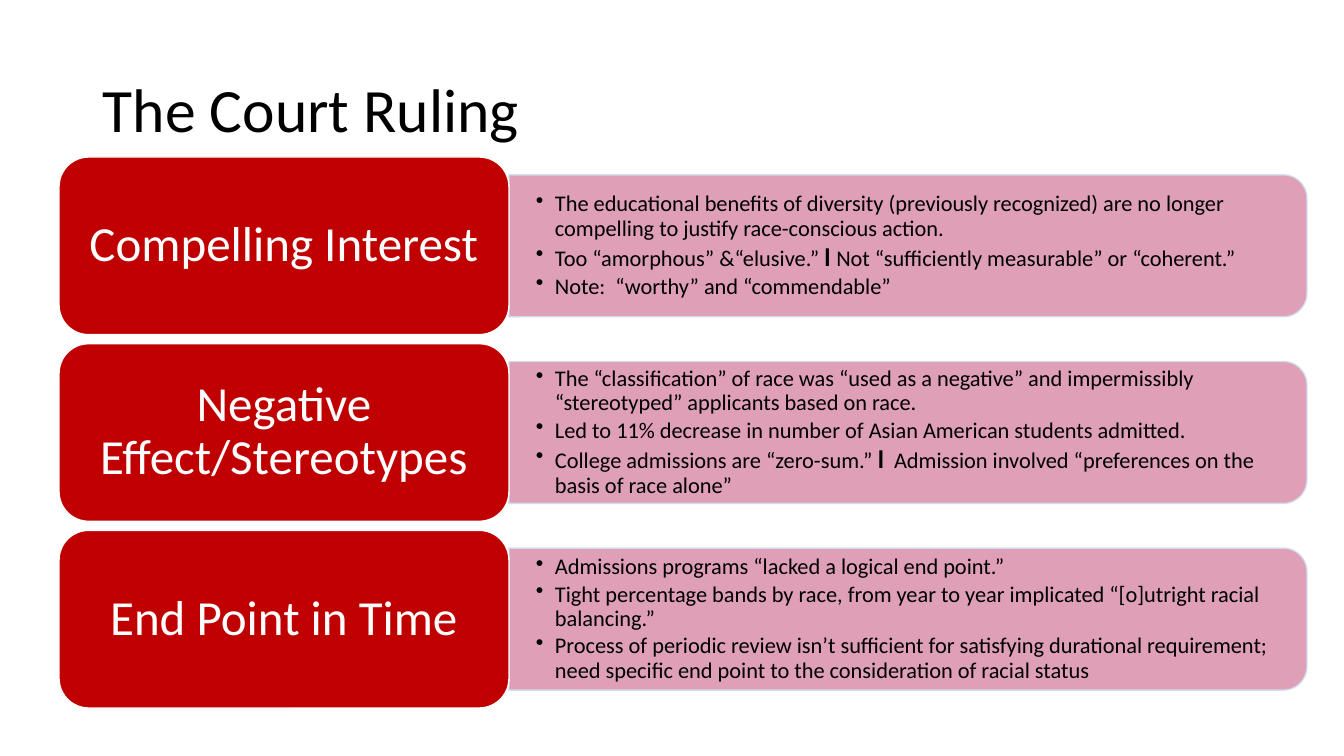
from dataclasses import dataclass

from lxml.etree import SubElement
from pptx import Presentation
from pptx.dml.color import RGBColor
from pptx.enum.shapes import MSO_SHAPE
from pptx.enum.text import MSO_ANCHOR, MSO_AUTO_SIZE, PP_ALIGN
from pptx.oxml.ns import qn
from pptx.util import Pt

TITLE = "The Court Ruling"
RULINGS = [
    ("Compelling Interest", [
        ["The educational benefits of diversity (previously recognized) are no longer "
         "compelling to justify race-conscious action."],
        ["Too “amorphous” &“elusive.” ", "l ", "Not “sufficiently measurable” or “coherent.”"],
        ["Note:  “worthy” and “commendable”"],
    ]),
    ("Negative Effect/Stereotypes", [
        ["The “classification” of race was “used as a negative” and impermissibly "
         "“stereotyped” applicants based on race."],
        ["Led to 11% decrease in number of Asian American students admitted."],
        ["College admissions are “zero-sum.” ", "l",
         "  Admission involved “preferences on the basis of race alone”"],
    ]),
    ("End Point in Time", [
        ["Admissions programs “lacked a logical end point.”"],
        ["Tight percentage bands by race, from year to year implicated "
         "“[o]utright racial balancing.”"],
        ["Process of periodic review isn’t sufficient for satisfying durational requirement; "
         "need specific end point to the consideration of racial status"],
    ]),
]


@dataclass(frozen=True)
class Theme:
    font: str = "Calibri"
    ink: str = "000000"
    white: str = "FFFFFF"
    red: str = "C00000"
    pink: str = "DB95B0"
    edge: str = "D2DEEF"
    title: int = 44
    label: int = 35
    body: int = 16
    divider: int = 18


T = Theme()
SCALE = 914400 / 100.8
SLIDE_W, SLIDE_H = 1344, 756
TITLE_BOX = (93, 40, 1159, 146)
LEFT, TOP, BOTTOM, GAP = 59, 157, 708, 9
LABEL_W = 450
PANEL_W, PANEL_H = 798, 142
TEXT_W, TEXT_H = 791, 128
INDENT = 19
OPACITY = 90


def px(n):
    return round(n * SCALE)


def box(x, y, w, h):
    return [px(n) for n in (x, y, w, h)]


def write(sp, paragraphs, size, color, align=PP_ALIGN.LEFT, margins=(10, 5),
          bullet=False, after=0):
    tf = sp.text_frame
    tf.word_wrap = True
    tf.auto_size = MSO_AUTO_SIZE.NONE
    tf.vertical_anchor = MSO_ANCHOR.MIDDLE
    tf.margin_left = tf.margin_right = px(margins[0])
    tf.margin_top = tf.margin_bottom = px(margins[1])
    for i, runs in enumerate(paragraphs):
        p = tf.add_paragraph() if i else tf.paragraphs[0]
        p.alignment, p.line_spacing, p.space_after = align, 0.9, Pt(after)
        if bullet:
            pPr = p._p.get_or_add_pPr()
            pPr.set("marL", str(px(INDENT)))
            pPr.set("indent", str(-px(INDENT)))
            SubElement(pPr, qn("a:buChar"), char="•")
        for j, text in enumerate(runs):
            divider = j % 2 == 1
            r = p.add_run()
            r.text = text
            r.font.name = T.font
            r.font.size = Pt(T.divider if divider else size)
            r.font.bold = divider
            r.font.color.rgb = RGBColor.from_string(color)


def add_block(s, kind, bounds, fill, line):
    sp = s.shapes.add_shape(kind, *bounds)
    sp.shadow.inherit = False
    sp.fill.solid()
    sp.fill.fore_color.rgb = RGBColor.from_string(fill)
    sp.line.color.rgb = RGBColor.from_string(line)
    sp.line.width = Pt(1)
    return sp


def add_panel(s, x, middle):
    bounds = box(x + (PANEL_W - PANEL_H) / 2, middle - PANEL_W / 2, PANEL_H, PANEL_W)
    sp = add_block(s, MSO_SHAPE.ROUND_2_SAME_RECTANGLE, bounds, T.pink, T.edge)
    sp.rotation = 90
    for clr in sp._element.spPr.iter(qn("a:srgbClr")):
        SubElement(clr, qn("a:alpha"), val=str(OPACITY * 1000))


def main():
    prs = Presentation()
    prs.slide_width, prs.slide_height = px(SLIDE_W), px(SLIDE_H)
    s = prs.slides.add_slide(prs.slide_layouts[5])
    title = s.shapes.title
    title.left, title.top, title.width, title.height = box(*TITLE_BOX)
    write(title, [[TITLE]], T.title, T.ink)

    label_h = (BOTTOM - TOP - GAP * (len(RULINGS) - 1)) / len(RULINGS)
    panel_x = LEFT + LABEL_W
    for i, (heading, points) in enumerate(RULINGS):
        y = TOP + i * (label_h + GAP)
        middle = y + label_h / 2
        add_panel(s, panel_x, middle)
        body = s.shapes.add_textbox(*box(panel_x, middle - TEXT_H / 2, TEXT_W, TEXT_H))
        write(body, points, T.body, T.ink, margins=(27, 14), bullet=True, after=2.4)
        label = add_block(s, MSO_SHAPE.ROUNDED_RECTANGLE,
                          box(LEFT, y, LABEL_W, label_h), T.red, T.white)
        write(label, [[heading]], T.label, T.white, align=PP_ALIGN.CENTER, margins=(15, 7))
    prs.save("out.pptx")


if __name__ == "__main__":
    main()
